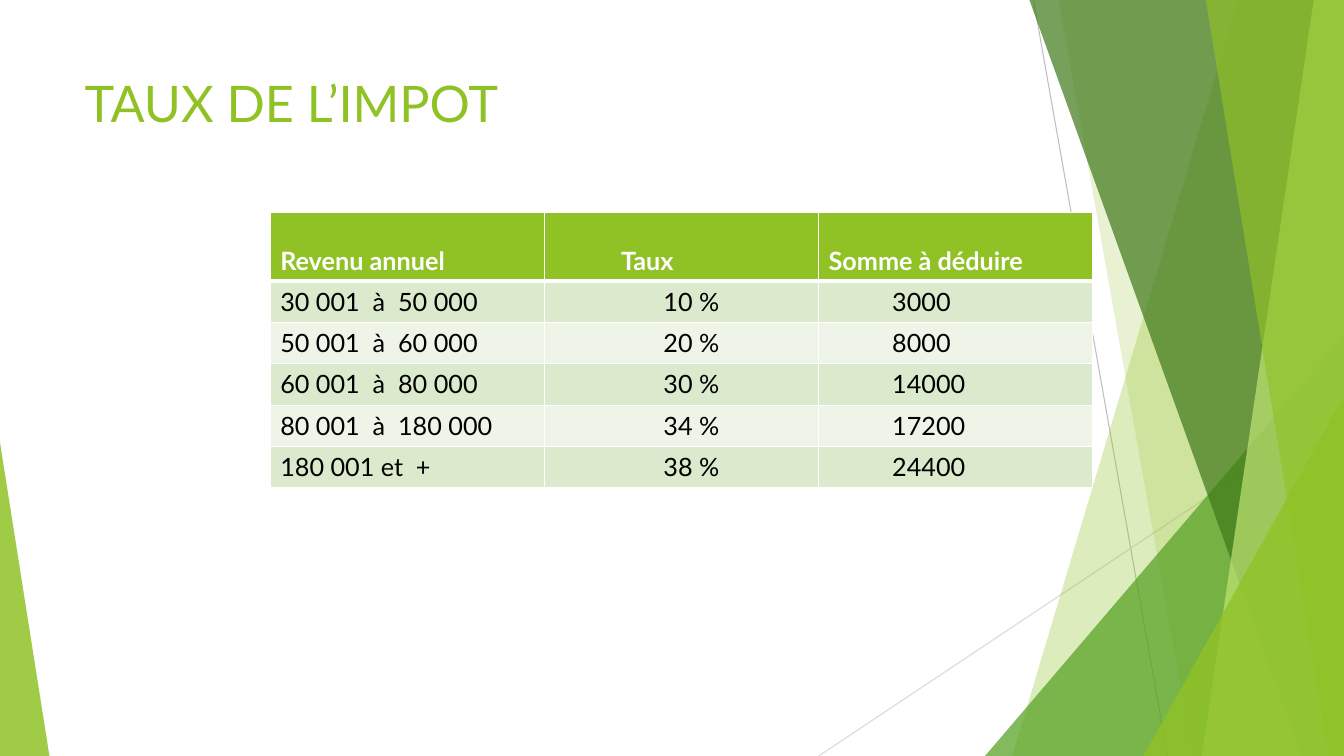
from lxml.etree import SubElement
from pptx import Presentation
from pptx.dml.color import RGBColor
from pptx.enum.shapes import MSO_CONNECTOR as Connector, MSO_SHAPE as Shape
from pptx.enum.text import MSO_ANCHOR as Anchor
from pptx.oxml import parse_xml
from pptx.oxml.ns import nsdecls, qn
from pptx.util import Inches, Pt

WIDTH, HEIGHT = 13.33, 7.5
FONT = "Lato"
GREEN, WHITE, BLACK = "90C226", "FFFFFF", "000000"

TITLE = "TAUX DE L’IMPOT"
HEADERS = ["Revenu annuel", "Taux", "Somme à déduire"]
BRACKETS = [
    ("30 001  à  50 000", "10 %", "3000"),
    ("50 001  à  60 000", "20 %", "8000"),
    ("60 001  à  80 000", "30 %", "14000"),
    ("80 001  à  180 000", "34 %", "17200"),
    ("180 001 et  +", "38 %", "24400"),
]
HEADER_INDENTS = [0.1, 0.76, 0.1]
BODY_INDENTS = [0.1, 1.18, 0.73]
BAND_FILLS = ["DBE9CD", "EEF4E8"]
TABLE_LEFT, TABLE_TOP, COLUMN_WIDTH = 2.68, 2.11, 2.72
HEADER_HEIGHT, ROW_HEIGHT = 0.68, 0.41

# start, end, colour
RAYS = [
    ((10.25, 0), (11.58, HEIGHT), "BFBFBF"),
    ((WIDTH, 4.03), (8.12, HEIGHT), "D9D9D9"),
]
# Back to front. Bands: x at the top, x at the bottom, reaching the right edge.
# Triangles: left, top, width, position of the apex.
FACETS = [
    ("band", (12.28, 10.04), GREEN, 30),
    ("band", (10.5, 11.83), GREEN, 20),
    ("triangle", (9.77, 3.33, 3.56, 1), "54A021", 72),
    ("band", (10.21, 12.91), "3F7819", 70),
    ("band", (13.03, 11.92), "C0E474", 70),
    ("band", (11.96, 13.18), GREEN, 65),
    ("triangle", (11.34, 3.93, 1.99, 1), GREEN, 80),
    ("triangle", (0, 4.39, 0.49, 0), GREEN, 85),
]


def color(hex_code):
    return RGBColor.from_string(hex_code)


def add_ray(slide, start, end, hex_code):
    ray = slide.shapes.add_connector(
        Connector.STRAIGHT, *map(Inches, start + end))
    ray.line.color.rgb = color(hex_code)
    ray.line.width = Pt(0.75)
    SubElement(ray._element.spPr, qn("a:effectLst"))


def add_band(slide, top_x, bottom_x):
    corners = [(WIDTH, 0), (WIDTH, HEIGHT), (bottom_x, HEIGHT)]
    outline = slide.shapes.build_freeform(Inches(top_x), 0)
    outline.add_line_segments(
        [(Inches(x), Inches(y)) for x, y in corners], close=True)
    return outline.convert_to_shape()


def add_triangle(slide, left, top, width, apex):
    box = map(Inches, (left, top, width, HEIGHT - top))
    triangle = slide.shapes.add_shape(Shape.ISOSCELES_TRIANGLE, *box)
    triangle.adjustments[0] = apex
    return triangle


def add_facet(slide, kind, geometry, hex_code, opacity):
    add = {"band": add_band, "triangle": add_triangle}[kind]
    facet = add(slide, *geometry)
    facet.shadow.inherit = False
    facet.line.fill.background()
    facet.fill.solid()
    facet.fill.fore_color.rgb = color(hex_code)
    tint = facet.fill._xPr.find(qn("a:solidFill"))[0]
    SubElement(tint, qn("a:alpha"), val=str(opacity * 1000))


def write(frame, text, size, hex_code, bold=False):
    run = frame.paragraphs[0].add_run()
    run.text = text
    style = {"name": FONT, "size": Pt(size), "bold": bold}
    for attribute, value in style.items():
        setattr(run.font, attribute, value)
    run.font.color.rgb = color(hex_code)


def add_borders(cell, bottom, top):
    """White cell edges, with the weights of bottom and top in points."""
    properties = cell._tc.get_or_add_tcPr()
    edges = [("L", 1), ("R", 1), ("T", top), ("B", bottom)]
    for position, (side, weight) in enumerate(edges):
        properties.insert(position, parse_xml(
            f'<a:ln{side} {nsdecls("a")} w="{Pt(weight)}"><a:solidFill>'
            f'<a:srgbClr val="{WHITE}"/></a:solidFill></a:ln{side}>'))


def add_tax_table(slide):
    rows = [HEADERS] + BRACKETS
    heights = [HEADER_HEIGHT] + [ROW_HEIGHT] * len(BRACKETS)
    box = (TABLE_LEFT, TABLE_TOP, COLUMN_WIDTH * len(HEADERS), sum(heights))
    table = slide.shapes.add_table(
        len(rows), len(HEADERS), *map(Inches, box)).table
    for column in table.columns:
        column.width = Inches(COLUMN_WIDTH)
    for r, texts in enumerate(rows):
        table.rows[r].height = Inches(heights[r])
        header = r == 0
        fill = GREEN if header else BAND_FILLS[(r - 1) % 2]
        indents = HEADER_INDENTS if header else BODY_INDENTS
        for c, text in enumerate(texts):
            cell = table.cell(r, c)
            cell.fill.solid()
            cell.fill.fore_color.rgb = color(fill)
            cell.margin_left = Inches(indents[c])
            cell.vertical_anchor = Anchor.BOTTOM if header else Anchor.TOP
            write(cell.text_frame, text, 18, WHITE if header else BLACK, header)
            add_borders(cell, bottom=3 if header else 1, top=3 if r == 1 else 1)


def main():
    deck = Presentation()
    deck.slide_width, deck.slide_height = Inches(WIDTH), Inches(HEIGHT)
    slide = deck.slides.add_slide(deck.slide_layouts[6])
    for ray in RAYS:
        add_ray(slide, *ray)
    for facet in FACETS:
        add_facet(slide, *facet)
    title_box = map(Inches, (0.74, 0.67, 9.4, 1.44))
    title = slide.shapes.add_textbox(*title_box).text_frame
    title.word_wrap = True
    write(title, TITLE, 36, GREEN)
    add_tax_table(slide)
    deck.save("out.pptx")


if __name__ == "__main__":
    main()
